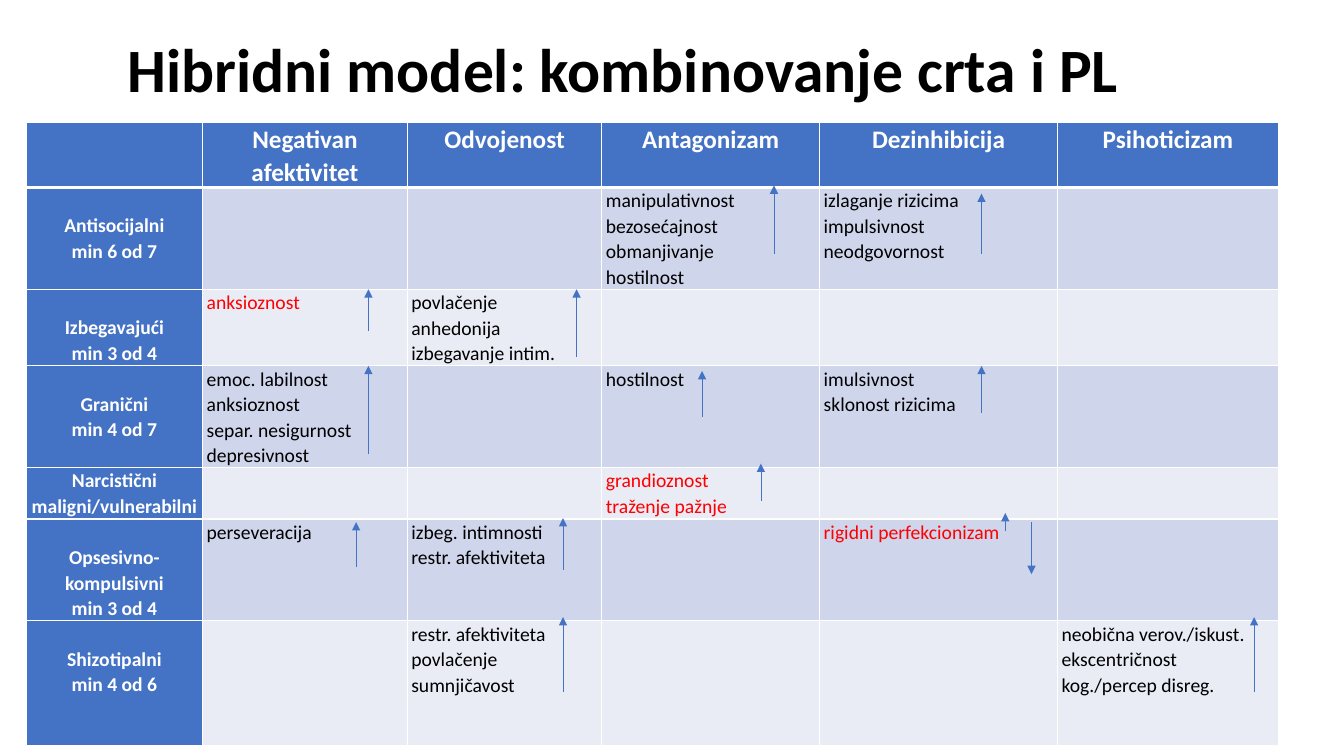
from itertools import accumulate

from lxml.etree import SubElement
from pptx import Presentation
from pptx.dml.color import RGBColor
from pptx.enum.shapes import MSO_CONNECTOR
from pptx.enum.text import MSO_ANCHOR, PP_ALIGN
from pptx.oxml import parse_xml
from pptx.oxml.ns import nsdecls, qn
from pptx.util import Inches, Pt

BLUE = RGBColor(0x44, 0x72, 0xC4)
BAND_DARK = RGBColor(0xCF, 0xD5, 0xEA)
BAND_LIGHT = RGBColor(0xE9, 0xEB, 0xF5)
WHITE = RGBColor(0xFF, 0xFF, 0xFF)
BLACK = RGBColor(0x00, 0x00, 0x00)
RED = RGBColor(0xFF, 0x00, 0x00)
FONT = "Calibri"

TITLE_BOX = (1.17, 0.31, 11.5, 0.81)
TABLE_ORIGIN = (0.26, 1.21)
COLUMN_WIDTHS = [1.75, 2.03, 1.93, 2.16, 2.36, 2.19]
ROW_HEIGHTS = [0.65, 1.01, 0.76, 1.01, 0.51, 1.01, 1.24]
LABEL_DROP = 0.25

TRAITS = ["Negativan afektivitet", "Odvojenost", "Antagonizam",
          "Dezinhibicija", "Psihoticizam"]
DISORDERS = [
    ["Antisocijalni", "min 6 od 7"],
    ["Izbegavajući", "min 3 od 4"],
    ["Granični", "min 4 od 7"],
    ["Narcistični", "maligni/vulnerabilni"],
    ["Opsesivno-kompulsivni", "min 3 od 4"],
    ["Shizotipalni", "min 4 od 6"],
]
NARCISSISTIC_ROW = 4
FACETS = {
    (1, 3): ["manipulativnost bezosećajnost obmanjivanje", "hostilnost"],
    (1, 4): ["izlaganje rizicima", "impulsivnost", "neodgovornost"],
    (2, 1): ["anksioznost"],
    (2, 2): ["povlačenje", "anhedonija izbegavanje intim."],
    (3, 1): ["emoc. labilnost", "anksioznost", "separ. nesigurnost depresivnost"],
    (3, 3): ["hostilnost"],
    (3, 4): ["imulsivnost", "sklonost rizicima"],
    (4, 3): ["grandioznost", "traženje pažnje"],
    (5, 1): ["perseveracija"],
    (5, 2): ["izbeg. intimnosti", "restr. afektiviteta"],
    (5, 4): ["rigidni perfekcionizam"],
    (6, 2): ["restr. afektiviteta", "povlačenje sumnjičavost"],
    (6, 5): ["neobična verov./iskust.", "ekscentričnost", "kog./percep disreg."],
}
RED_FACETS = {(2, 1), (4, 3), (5, 4)}

# row, column, then shares of that cell: x, tail y, head y
ARROWS = [
    (1, 3, 0.79, 0.65, -0.02),
    (1, 4, 0.68, 0.65, 0.06),
    (2, 1, 0.81, 0.55, 0),
    (2, 2, 0.87, 0.88, 0),
    (3, 1, 0.81, 0.87, 0),
    (3, 3, 0.46, 0.5, 0.05),
    (3, 4, 0.68, 0.46, 0),
    (4, 3, 0.73, 0.65, -0.08),
    (5, 1, 0.75, 0.47, 0.03),
    (5, 2, 0.8, 0.5, -0.01),
    (5, 4, 0.89, 0.03, 0.54),
    (5, 4, 0.78, 0.12, -0.06),
    (6, 2, 0.8, 0.57, -0.03),
    (6, 5, 0.89, 0.57, -0.03),
]


def style_paragraph(para, size, color, bold, spacing, align=PP_ALIGN.LEFT):
    para.alignment = align
    para.line_spacing = spacing
    font = para.font
    font.name, font.size, font.bold = FONT, Pt(size), bold
    font.color.rgb = color


def add_title(page, box):
    frame = page.shapes.add_textbox(*map(Inches, box)).text_frame
    frame.word_wrap = True
    frame.vertical_anchor = MSO_ANCHOR.MIDDLE
    frame.text = "Hibridni model: kombinovanje crta i PL"
    style_paragraph(frame.paragraphs[0], 44, BLACK, True, 0.9)


def set_borders(cell, row):
    widths = {"lnL": 1, "lnR": 1, "lnT": 3 if row == 1 else 1, "lnB": 3 if row == 0 else 1}
    for position, (side, width) in enumerate(widths.items()):
        border = parse_xml(
            f'<a:{side} {nsdecls("a")} w="{Pt(width)}"><a:solidFill>'
            f'<a:srgbClr val="{WHITE}"/></a:solidFill></a:{side}>')
        cell._tc.get_or_add_tcPr().insert(position, border)


def fill_cell(cell, lines, size, color, bold, align):
    cell.margin_left = cell.margin_right = Inches(0.04)
    cell.margin_top = cell.margin_bottom = 0
    cell.text = "\n".join(lines)
    for para in cell.text_frame.paragraphs:
        style_paragraph(para, size, color, bold, 1.07, align)


def add_trait_table(page, origin):
    size = (sum(COLUMN_WIDTHS), sum(ROW_HEIGHTS))
    table = page.shapes.add_table(len(ROW_HEIGHTS), len(COLUMN_WIDTHS),
                                  *map(Inches, origin + size)).table
    for column, width in zip(table.columns, COLUMN_WIDTHS):
        column.width = Inches(width)
    for row, height in zip(table.rows, ROW_HEIGHTS):
        row.height = Inches(height)

    for row in range(len(ROW_HEIGHTS)):
        for column in range(len(COLUMN_WIDTHS)):
            cell = table.cell(row, column)
            heading = row == 0 or column == 0
            cell.fill.solid()
            cell.fill.fore_color.rgb = BLUE if heading else BAND_DARK if row % 2 else BAND_LIGHT
            set_borders(cell, row)
            if row == 0 and column:
                fill_cell(cell, [TRAITS[column - 1]], 18, WHITE, True, PP_ALIGN.CENTER)
            elif row and column == 0:
                fill_cell(cell, DISORDERS[row - 1], 14, WHITE, True, PP_ALIGN.CENTER)
                if row != NARCISSISTIC_ROW:
                    cell.margin_top = Inches(LABEL_DROP)
            elif (row, column) in FACETS:
                color = RED if (row, column) in RED_FACETS else BLACK
                fill_cell(cell, FACETS[row, column], 14, color, False, PP_ALIGN.LEFT)


def add_arrows(page, origin):
    lefts = list(accumulate(COLUMN_WIDTHS, initial=origin[0]))
    tops = list(accumulate(ROW_HEIGHTS, initial=origin[1]))
    for row, column, across, tail, head in ARROWS:
        x = Inches(lefts[column] + across * COLUMN_WIDTHS[column])
        start, end = (Inches(tops[row] + share * ROW_HEIGHTS[row]) for share in (tail, head))
        arrow = page.shapes.add_connector(MSO_CONNECTOR.STRAIGHT, x, start, x, end)
        arrow.line.color.rgb = BLUE
        arrow.line.width = Pt(0.5)
        SubElement(arrow.line._get_or_add_ln(), qn("a:tailEnd"), type="triangle")
        SubElement(arrow._element.spPr, qn("a:effectLst"))


def main():
    deck = Presentation()
    deck.slide_width, deck.slide_height = Inches(13.33), Inches(7.5)
    page = deck.slides.add_slide(deck.slide_layouts[6])
    add_title(page, TITLE_BOX)
    add_trait_table(page, TABLE_ORIGIN)
    add_arrows(page, TABLE_ORIGIN)
    deck.save("out.pptx")


if __name__ == "__main__":
    main()
